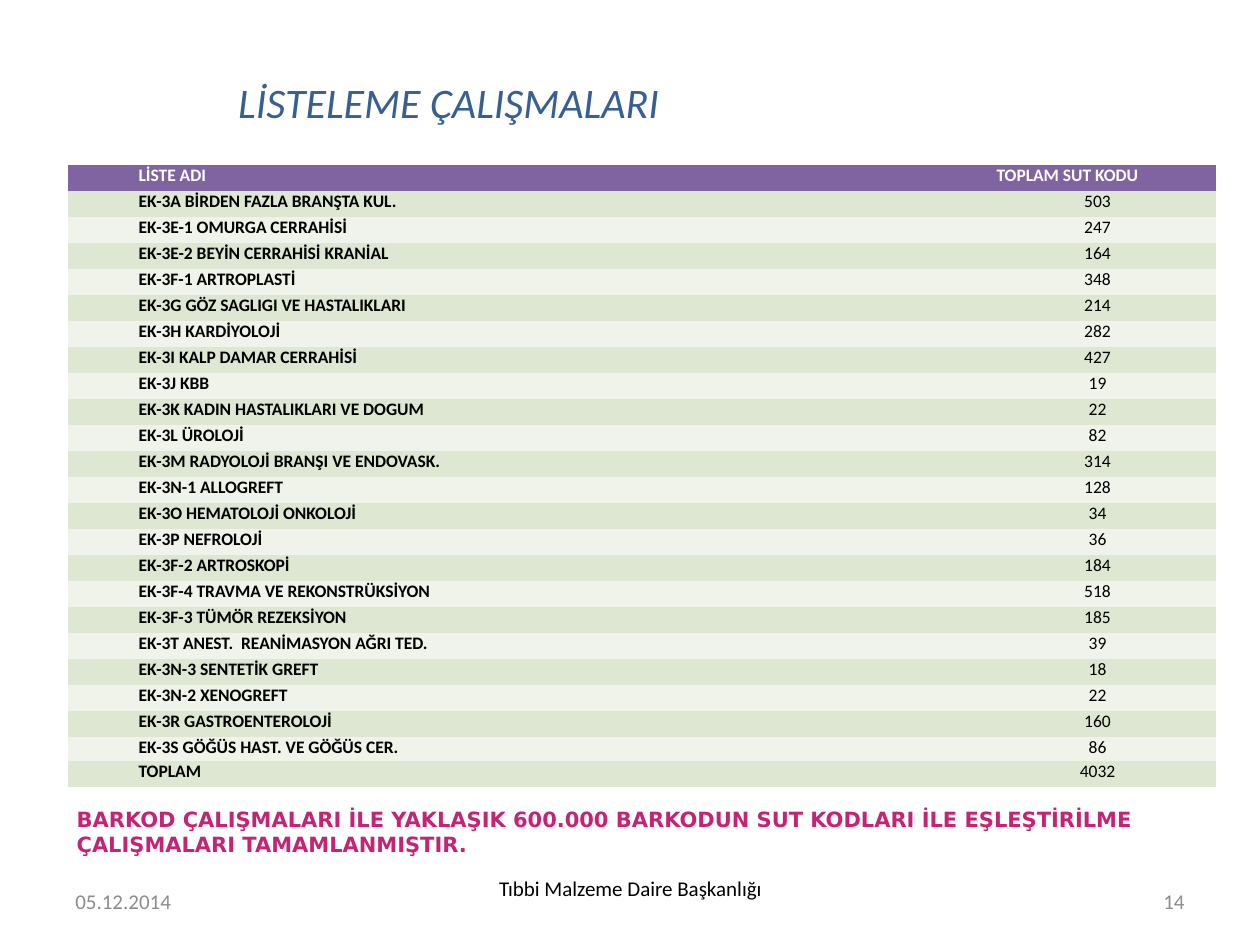
"""Builds the listing slide with its table of lists and SUT code totals."""
from pptx import Presentation
from pptx.dml.color import RGBColor
from pptx.enum.text import MSO_ANCHOR as Anchor, PP_ALIGN as Align
from pptx.util import Inches, Pt

COLORS = {
    "title": "376092", "note": "C52374", "muted": "8C8C8C", "text": "000000",
    "header": "8064A2", "header_text": "FFFFFF", "odd": "DEE7D1", "even": "EFF3EA",
}
NO_STYLE = "{2D5ABB26-0587-4C30-8999-92F81FD0307C}"


def write(frame, text, size, color, align=Align.LEFT, font="Calibri", bold=False, italic=False):
    frame.text = text
    paragraph = frame.paragraphs[0]
    paragraph.alignment = align
    for run in paragraph.runs:
        run.font.name = font
        run.font.size = Pt(size)
        run.font.bold = bold
        run.font.italic = italic
        run.font.color.rgb = RGBColor.from_string(COLORS[color])
    return paragraph


def add_text(left, top, width, height, anchor):
    frame = slide.shapes.add_textbox(*map(Inches, (left, top, width, height))).text_frame
    frame.word_wrap = True
    frame.vertical_anchor = anchor
    return frame


prs = Presentation()
prs.slide_width, prs.slide_height = Inches(10), Inches(7.5)
slide = prs.slides.add_slide(prs.slide_layouts[5])

title = slide.shapes.title
title.left, title.top, title.width, title.height = map(Inches, (1.79, 0.31, 8.01, 0.99))
title.text_frame.vertical_anchor = Anchor.MIDDLE
write(title.text_frame, "LİSTELEME ÇALIŞMALARI", 24, "title", italic=True)

note = add_text(0.51, 6.35, 9.29, 0.5, Anchor.TOP)
write(note, "BARKOD ÇALIŞMALARI İLE YAKLAŞIK 600.000 BARKODUN SUT KODLARI İLE "
      "EŞLEŞTİRİLME ÇALIŞMALARI TAMAMLANMIŞTIR.", 12, "note", font="DejaVu Sans", bold=True)

footer_top, footer_height = 6.95, 0.4
date = add_text(0.5, footer_top, 2.33, footer_height, Anchor.MIDDLE)
write(date, "05.12.2014", 12, "muted")
department = add_text(3.42, footer_top, 3.17, footer_height, Anchor.TOP)
department.margin_top = 0
write(department, "Tıbbi Malzeme Daire Başkanlığı", 12, "text", Align.CENTER)
page = add_text(7.17, footer_top, 2.33, footer_height, Anchor.MIDDLE)
write(page, "14", 12, "muted", Align.RIGHT)

lists = [
    ("LİSTE ADI", "TOPLAM SUT KODU"),
    ("EK-3A BİRDEN FAZLA BRANŞTA KUL.", "503"),
    ("EK-3E-1 OMURGA CERRAHİSİ", "247"),
    ("EK-3E-2 BEYİN CERRAHİSİ KRANİAL", "164"),
    ("EK-3F-1 ARTROPLASTİ", "348"),
    ("EK-3G GÖZ SAGLIGI VE HASTALIKLARI", "214"),
    ("EK-3H KARDİYOLOJİ", "282"),
    ("EK-3I KALP DAMAR CERRAHİSİ", "427"),
    ("EK-3J KBB", "19"),
    ("EK-3K KADIN HASTALIKLARI VE DOGUM", "22"),
    ("EK-3L ÜROLOJİ", "82"),
    ("EK-3M RADYOLOJİ BRANŞI VE ENDOVASK.", "314"),
    ("EK-3N-1 ALLOGREFT", "128"),
    ("EK-3O HEMATOLOJİ ONKOLOJİ", "34"),
    ("EK-3P NEFROLOJİ", "36"),
    ("EK-3F-2 ARTROSKOPİ", "184"),
    ("EK-3F-4 TRAVMA VE REKONSTRÜKSİYON", "518"),
    ("EK-3F-3 TÜMÖR REZEKSİYON", "185"),
    ("EK-3T ANEST.  REANİMASYON AĞRI TED.", "39"),
    ("EK-3N-3 SENTETİK GREFT", "18"),
    ("EK-3N-2 XENOGREFT", "22"),
    ("EK-3R GASTROENTEROLOJİ", "160"),
    ("EK-3S GÖĞÜS HAST. VE GÖĞÜS CER.", "86"),
    ("TOPLAM", "4032"),
]
table_height, short_row = 4.94, 0.19
row_height = (table_height - short_row) / (len(lists) - 1)
table = slide.shapes.add_table(
    len(lists), 2, Inches(0.54), Inches(1.31), Inches(9.11), Inches(table_height)).table
table._tbl.tblPr[0].text = NO_STYLE
table.columns[0].width, table.columns[1].width = Inches(6.73), Inches(2.38)

for row, entry in enumerate(lists):
    table.rows[row].height = Inches(short_row if row == len(lists) - 2 else row_height)
    header = row == 0
    band = "header" if header else "odd" if row % 2 else "even"
    for column, text in enumerate(entry):
        cell = table.cell(row, column)
        cell.margin_left = cell.margin_right = Inches(0.06)
        cell.margin_top = cell.margin_bottom = 0
        cell.fill.solid()
        cell.fill.fore_color.rgb = RGBColor.from_string(COLORS[band])
        paragraph = write(cell.text_frame, text, 10, "header_text" if header else "text",
                          Align.CENTER if column else Align.JUSTIFY if header else Align.LEFT,
                          bold=header or column == 0)
        indent = 0.02 if header and column else 0.5
        paragraph._p.get_or_add_pPr().set("marL", str(Inches(indent)))

prs.save("out.pptx")
